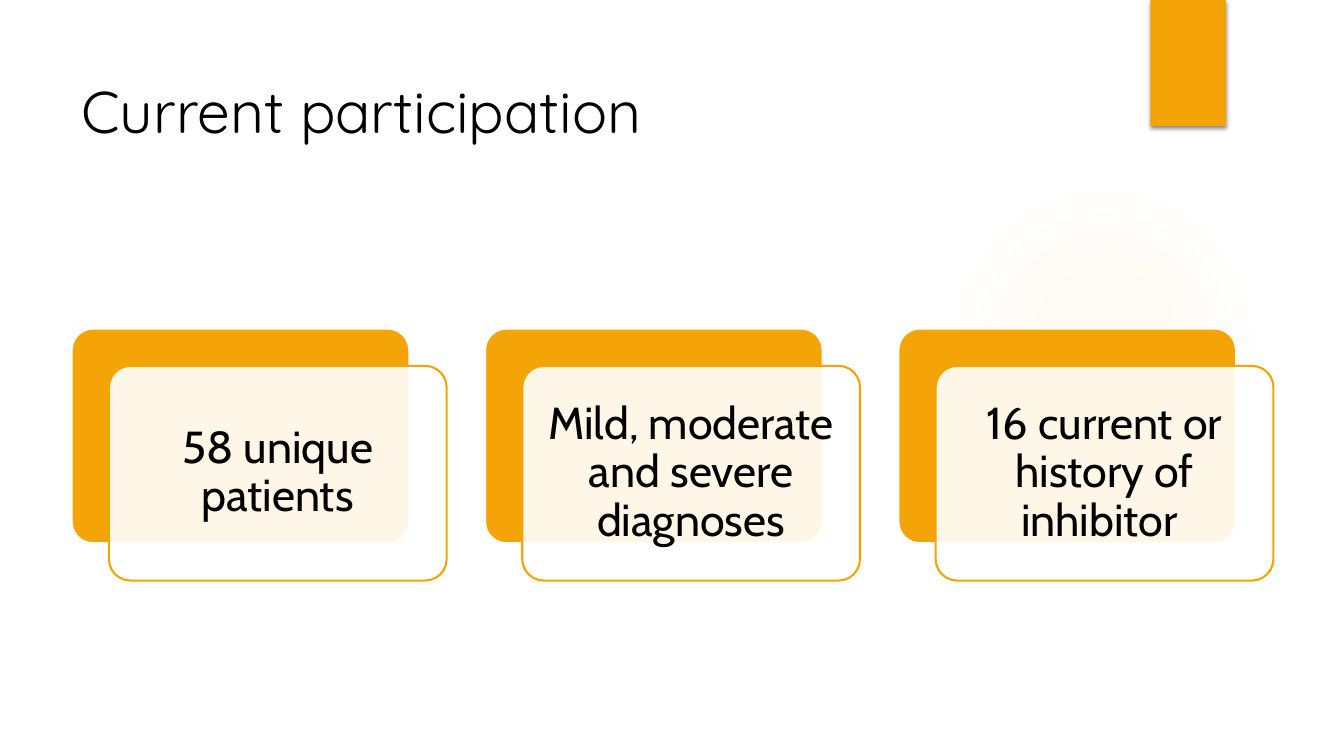
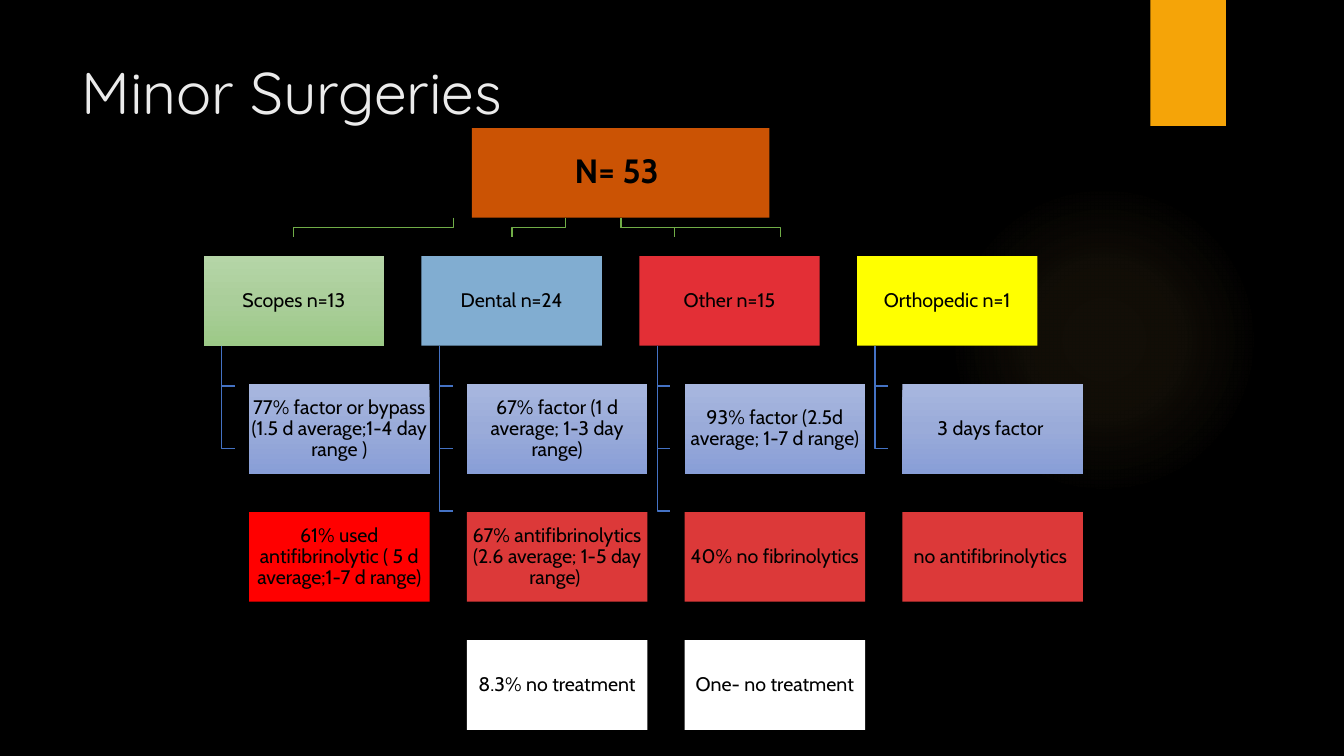
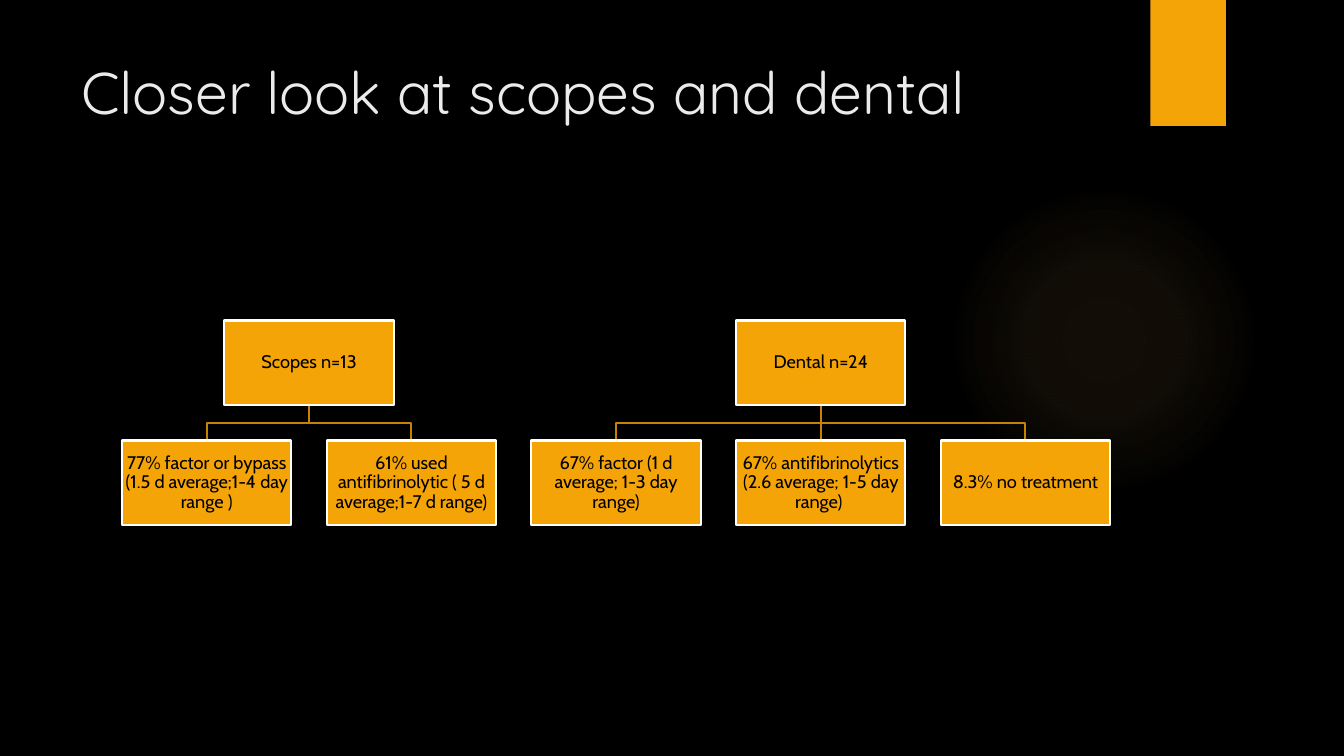
from lxml import etree
from pptx import Presentation
from pptx.dml.color import RGBColor
from pptx.enum.shapes import MSO_CONNECTOR, MSO_SHAPE
from pptx.enum.text import MSO_ANCHOR, PP_ALIGN
from pptx.oxml.ns import qn
from pptx.util import Inches, Pt

RECT, ROUND_RECT, OVAL = MSO_SHAPE.RECTANGLE, MSO_SHAPE.ROUNDED_RECTANGLE, MSO_SHAPE.OVAL
STRAIGHT = MSO_CONNECTOR.STRAIGHT
MIDDLE, CENTER = MSO_ANCHOR.MIDDLE, PP_ALIGN.CENTER

TITLE_FONT, BODY_FONT = "Quicksand", "Cabin"
WHITE = RGBColor(0xFF, 0xFF, 0xFF)
BLACK = RGBColor(0x00, 0x00, 0x00)
PALE = RGBColor(0xEB, 0xEB, 0xEB)
AMBER = RGBColor(0xF5, 0xA4, 0x08)
AMBER_DARK = RGBColor(0xC4, 0x83, 0x06)
GLOW = RGBColor(0xFA, 0xC9, 0x6A)
RUST = RGBColor(0xCB, 0x53, 0x04)
SKY = RGBColor(0x81, 0xAD, 0xD1)
CRIMSON = RGBColor(0xE3, 0x2F, 0x36)
YELLOW = RGBColor(0xFF, 0xFF, 0x00)
RED = RGBColor(0xFF, 0x00, 0x00)
BRICK = RGBColor(0xDC, 0x39, 0x39)
LINE_GREEN = RGBColor(0x70, 0xAD, 0x47)
LINE_BLUE = RGBColor(0x44, 0x72, 0xC4)

# Gradients: (position %, colour, opacity %)
GLOW_STOPS = [(0, GLOW, 7), (36, GLOW, 6), (69, GLOW, 0)]
GREEN_STOPS = [(0, RGBColor(0xB5, 0xD5, 0xA7), 100), (50, RGBColor(0xAA, 0xCE, 0x9A), 100),
               (100, RGBColor(0x9C, 0xC9, 0x87), 100)]
BLUE_STOPS = [(0, RGBColor(0xA8, 0xB7, 0xDF), 100), (50, RGBColor(0x9A, 0xAB, 0xD9), 100),
              (100, RGBColor(0x88, 0x9E, 0xD7), 100)]

# Answers that appear in both trees
SCOPES = "Scopes n=13"
SCOPES_FACTOR = "77% factor or bypass (1.5 d average;1-4 day range )"
SCOPES_ANTI = "61% used antifibrinolytic ( 5 d average;1-7 d range)"
DENTAL = "Dental n=24"
DENTAL_FACTOR = "67% factor (1 d average; 1-3 day range)"
DENTAL_ANTI = "67% antifibrinolytics (2.6 average; 1-5 day range) "
DENTAL_NONE = "8.3% no treatment"


# ---- Fills and effects ----
def add_child(parent, tag, **attributes):
    return etree.SubElement(parent, qn(tag), {key: str(value) for key, value in attributes.items()})


def fill_gradient(shape, stops, radial=False):
    shape.fill.background()
    properties = shape._element.spPr
    gradient = etree.Element(qn("a:gradFill"), rotWithShape="1")
    stop_list = add_child(gradient, "a:gsLst")
    for position, color, opacity in stops:
        stop = add_child(stop_list, "a:gs", pos=position * 1000)
        value = add_child(stop, "a:srgbClr", val=color)
        add_child(value, "a:alpha", val=opacity * 1000)
    if radial:
        focus = add_child(gradient, "a:path", path="circle")
        add_child(focus, "a:fillToRect", l=50000, t=50000, r=50000, b=50000)
    else:
        add_child(gradient, "a:lin", ang=5400000, scaled=0)
    properties.replace(properties.find(qn("a:noFill")), gradient)


def set_opacity(shape, percent):
    color = shape._element.spPr.find(qn("a:solidFill")).find(qn("a:srgbClr"))
    add_child(color, "a:alpha", val=percent * 1000)


def add_shadow(shape):
    effects = shape._element.spPr.find(qn("a:effectLst"))
    shadow = add_child(effects, "a:outerShdw", blurRad=Pt(3), dist=Pt(2), dir=5400000, rotWithShape=0)
    add_child(add_child(shadow, "a:srgbClr", val=BLACK), "a:alpha", val=45000)


# ---- Elements ----
def add_box(page, kind, left, top, width, height, fill, line=None):
    """Add a shape; fill is a colour or a list of gradient stops."""
    box = page.shapes.add_shape(kind, Inches(left), Inches(top), Inches(width), Inches(height))
    box.shadow.inherit = False
    if isinstance(fill, list):
        fill_gradient(box, fill, radial=kind == OVAL)
    else:
        box.fill.solid()
        box.fill.fore_color.rgb = fill
    if line is None:
        box.line.fill.background()
    else:
        box.line.color.rgb = line
        box.line.width = Pt(1.5)
    return box


def write_label(box, text, size, inset=0.01, bold=False):
    frame = box.text_frame
    frame.word_wrap = True
    frame.vertical_anchor = MIDDLE
    frame.margin_left = frame.margin_right = Inches(inset)
    frame.margin_top = frame.margin_bottom = Inches(inset)
    para = frame.paragraphs[0]
    para.text = text
    para.alignment = CENTER
    para.line_spacing = 0.9
    para.font.name, para.font.size, para.font.bold = BODY_FONT, Pt(size), bold
    para.font.color.rgb = BLACK


def add_polyline(page, points, color, width):
    corners = [(Inches(x), Inches(y)) for x, y in points]
    builder = page.shapes.build_freeform(*corners[0])
    builder.add_line_segments(corners[1:], close=False)
    path_line = builder.convert_to_shape()
    path_line.shadow.inherit = False
    path_line.fill.background()
    path_line.line.color.rgb = color
    path_line.line.width = Pt(width)


def add_branch(page, x1, y1, x2, y2, color, width):
    """Join two levels of a tree: down, across, down."""
    if abs(x1 - x2) < 0.01:
        stem = page.shapes.add_connector(STRAIGHT, Inches(x1), Inches(y1), Inches(x2), Inches(y2))
        stem.line.color.rgb = color
        stem.line.width = Pt(width)
        add_child(stem._element.spPr, "a:effectLst")
        return
    middle = (y1 + y2) / 2
    add_polyline(page, [(x1, y1), (x1, middle), (x2, middle), (x2, y2)], color, width)


def add_page(deck, title, background=BLACK, color=PALE, title_top=0.5):
    page = deck.slides.add_slide(deck.slide_layouts[6])
    page.background.fill.solid()
    page.background.fill.fore_color.rgb = background
    # Glow and corner tab
    add_box(page, OVAL, 9.41, 1.83, 3.08, 3.08, GLOW_STOPS)
    add_shadow(add_box(page, RECT, 11.41, 0, 0.75, 1.25, AMBER))
    # Title
    box = page.shapes.add_textbox(Inches(0.71), Inches(title_top), Inches(10.29), Inches(1.11))
    box.text_frame.word_wrap = True
    para = box.text_frame.paragraphs[0]
    para.text = title
    para.font.name, para.font.size = TITLE_FONT, Pt(42)
    para.font.color.rgb = color
    return page


# ---- Slides ----
def build_participation(deck):
    page = add_page(deck, "Current participation", WHITE, BLACK, title_top=0.69)
    width, height, pitch, offset = 3.35, 2.13, 4.1, 0.37
    facts = ["58 unique patients", "Mild, moderate and severe diagnoses",
             "16 current or history of inhibitor "]
    for index, fact in enumerate(facts):
        left, top = 0.71 + index * pitch, 3.26
        back = add_box(page, ROUND_RECT, left, top, width, height, AMBER, WHITE)
        front = add_box(page, ROUND_RECT, left + offset, top + offset, width, height, WHITE, AMBER)
        for card in (back, front):
            card.adjustments[0] = 0.1
        set_opacity(front, 90)
        write_label(front, fact, 32, inset=0.13)


def build_surgeries(deck):
    page = add_page(deck, "Minor Surgeries")
    width, height, column_pitch, row_pitch = 1.79, 0.89, 2.16, 1.27
    first_left, indent = 2.02, 0.45
    groups = [
        (SCOPES, GREEN_STOPS, [(SCOPES_FACTOR, BLUE_STOPS), (SCOPES_ANTI, RED)]),
        (DENTAL, SKY, [(DENTAL_FACTOR, BLUE_STOPS), (DENTAL_ANTI, BRICK), (DENTAL_NONE, WHITE)]),
        ("Other n=15", CRIMSON, [("93% factor (2.5d average; 1-7 d range)", BLUE_STOPS),
                                 ("40% no fibrinolytics", BRICK), ("One- no treatment", WHITE)]),
        ("Orthopedic n=1", YELLOW, [("3 days factor ", BLUE_STOPS), ("no antifibrinolytics ", BRICK)]),
    ]
    # Root and its branches
    root = add_box(page, RECT, 4.68, row_pitch, 2.95, height, RUST)
    write_label(root, "N= 53 ", 24, inset=0.02, bold=True)
    for start, end in [(4.5, 2.91), (5.61, 5.08), (6.16, 6.69), (6.16, 7.74)]:
        add_branch(page, start, 2.16, end, 2.35, LINE_GREEN, 1)
    # Groups with their answers below
    for column, (name, color, answers) in enumerate(groups):
        left, top = first_left + column * column_pitch, 2 * row_pitch
        trunk, bottom = left + 0.18, top + height
        write_label(add_box(page, RECT, left, top, width, height, color), name, 14)
        for row, (answer, answer_fill) in enumerate(answers):
            tick = 3.83 + row * 0.62
            add_polyline(page, [(trunk, bottom), (trunk, tick), (trunk + 0.13, tick)], LINE_BLUE, 1)
            box = add_box(page, RECT, left + indent, top + (row + 1) * row_pitch, width, height, answer_fill)
            write_label(box, answer, 14)


def build_closer_look(deck):
    page = add_page(deck, "Closer look at scopes and dental")
    width, height, pitch = 1.68, 0.84, 2.03
    parent_top, child_top = 3.18, 4.37
    groups = [(SCOPES, [SCOPES_FACTOR, SCOPES_ANTI]),
              (DENTAL, [DENTAL_FACTOR, DENTAL_ANTI, DENTAL_NONE])]
    left = 1.21
    for name, answers in groups:
        child_lefts = [left + index * pitch for index in range(len(answers))]
        parent_left = (child_lefts[0] + child_lefts[-1]) / 2
        for child_left in child_lefts:
            add_branch(page, parent_left + width / 2, parent_top + height,
                       child_left + width / 2, child_top, AMBER_DARK, 1.5)
        boxes = [(parent_left, parent_top, name)]
        boxes += [(child_left, child_top, answer) for child_left, answer in zip(child_lefts, answers)]
        for box_left, top, text in boxes:
            write_label(add_box(page, RECT, box_left, top, width, height, AMBER, WHITE), text, 13)
        left += len(answers) * pitch


def main():
    deck = Presentation()
    deck.slide_width, deck.slide_height = Inches(13.33), Inches(7.5)
    build_participation(deck)
    build_surgeries(deck)
    build_closer_look(deck)
    deck.save("out.pptx")


if __name__ == "__main__":
    main()
